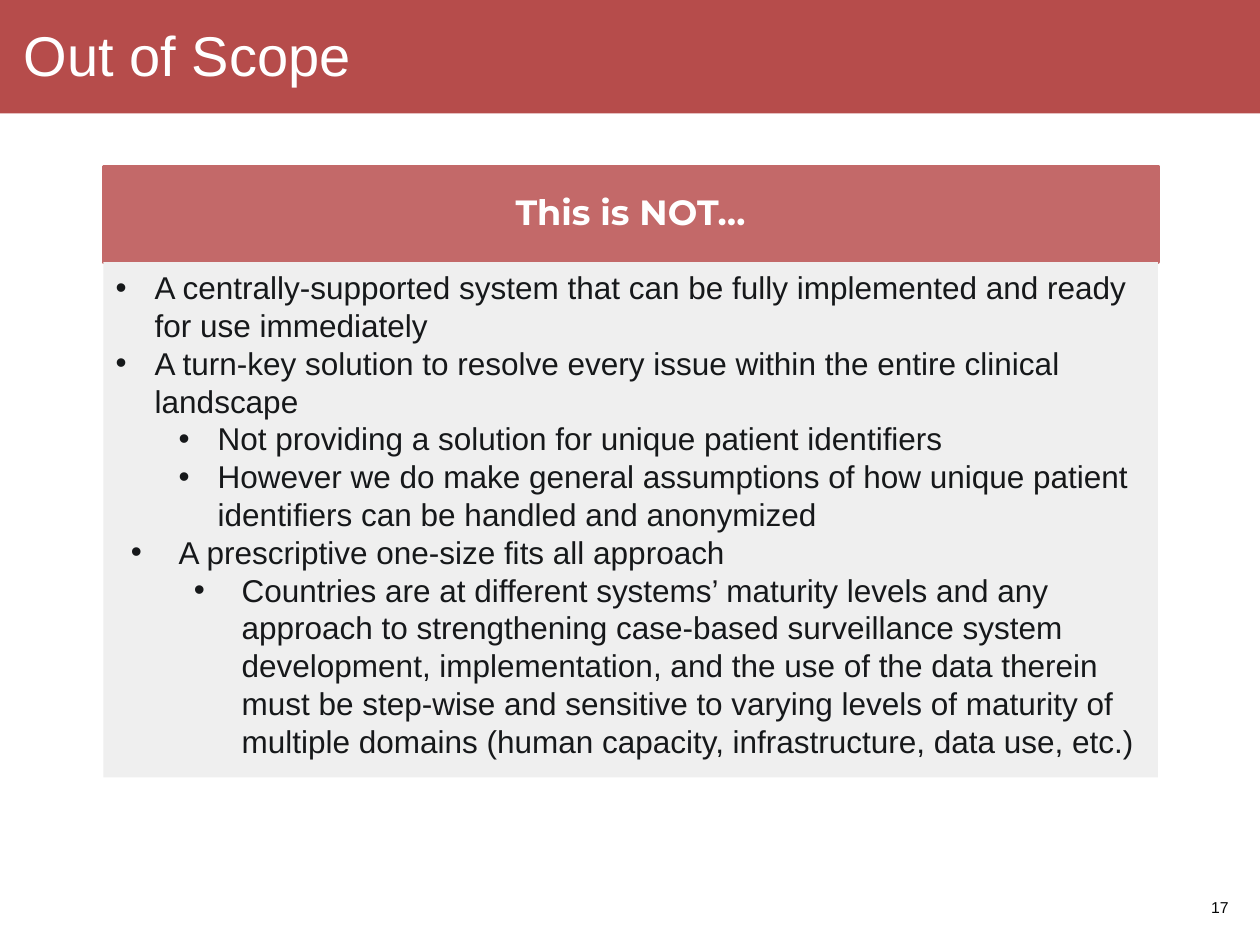
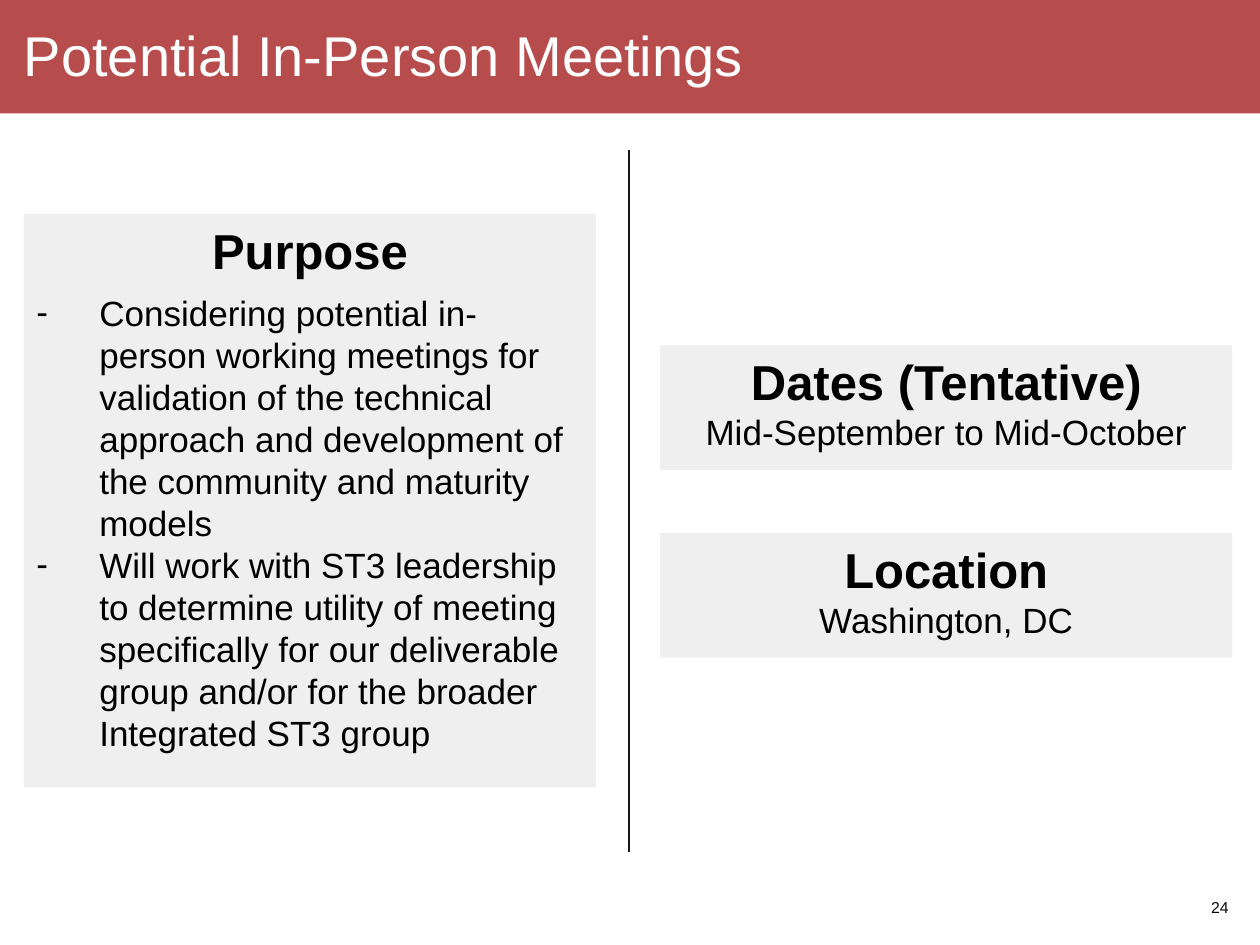
from dataclasses import dataclass, replace
from typing import Optional

from lxml.etree import SubElement
from pptx import Presentation
from pptx.dml.color import RGBColor as Color
from pptx.enum.shapes import MSO_CONNECTOR as Connector, MSO_SHAPE as Preset
from pptx.enum.text import MSO_ANCHOR as Anchor, PP_ALIGN as Align
from pptx.oxml.ns import qn
from pptx.util import Inches, Pt


@dataclass(frozen=True)
class Theme:
    band: str = "B64C4B"
    heading: str = "C36969"
    panel: str = "EFEFEF"
    ink: str = "16181A"
    black: str = "000000"
    white: str = "FFFFFF"
    footer: str = "050606"
    body_font: str = "Arial"
    heading_font: str = "Montserrat"
    title_size: int = 32
    panel_title_size: int = 28
    text_size: int = 20
    list_size: int = 18
    footer_size: int = 9


THEME = Theme()
WIDTH, HEIGHT = Inches(10), Inches(7.5)
COLUMN, ROW = WIDTH / 100, HEIGHT / 75


@dataclass(frozen=True)
class Frame:
    column: float
    row: float
    columns: float
    rows: float

    def box(self) -> tuple[int, int, int, int]:
        return (round(self.column * COLUMN), round(self.row * ROW),
                round(self.columns * COLUMN), round(self.rows * ROW))


@dataclass(frozen=True)
class Line:
    text: str
    size: int
    color: str
    font: str = THEME.body_font
    bold: bool = False
    align: Align = Align.LEFT
    spacing: Optional[float] = None
    before: float = 0
    bullet: str = ""
    indent: float = 0
    hanging: float = 0
    level: int = 0


@dataclass(frozen=True)
class Panel:
    frame: Frame
    lines: tuple[Line, ...]
    fill: Optional[str] = THEME.panel
    outline: Optional[str] = None
    anchor: Anchor = Anchor.TOP
    margins: tuple[float, float] = (1, 0.5)


def add_bullet(paragraph, line: Line) -> None:
    properties = paragraph._p.get_or_add_pPr()
    properties.set("marL", str(round(line.indent * COLUMN)))
    properties.set("indent", str(round(-line.hanging * COLUMN)))
    color = SubElement(properties, qn("a:buClr"))
    SubElement(color, qn("a:srgbClr")).set("val", line.color)
    SubElement(properties, qn("a:buFont")).set("typeface", line.font)
    SubElement(properties, qn("a:buChar")).set("char", line.bullet)


def write_lines(text_frame, lines: tuple[Line, ...]) -> None:
    for index, line in enumerate(lines):
        paragraph = text_frame.add_paragraph() if index else text_frame.paragraphs[0]
        paragraph.text = line.text
        paragraph.level = line.level
        paragraph.alignment = line.align
        if line.bullet:
            add_bullet(paragraph, line)
        if line.spacing:
            paragraph.line_spacing = line.spacing
        if line.before:
            paragraph.space_before = Pt(line.before)
        font = paragraph.font
        font.name, font.size, font.bold = line.font, Pt(line.size), line.bold
        font.color.rgb = Color.from_string(line.color)


def add_panel(slide, panel: Panel) -> None:
    if panel.fill:
        shape = slide.shapes.add_shape(Preset.RECTANGLE, *panel.frame.box())
        shape.shadow.inherit = False
        shape.fill.solid()
        shape.fill.fore_color.rgb = Color.from_string(panel.fill)
        if panel.outline:
            shape.line.color.rgb = Color.from_string(panel.outline)
            shape.line.width = Pt(2)
        else:
            shape.line.fill.background()
    else:
        shape = slide.shapes.add_textbox(*panel.frame.box())
    text_frame = shape.text_frame
    text_frame.word_wrap = True
    text_frame.vertical_anchor = panel.anchor
    horizontal, vertical = panel.margins
    text_frame.margin_left = text_frame.margin_right = round(horizontal * COLUMN)
    text_frame.margin_top = text_frame.margin_bottom = round(vertical * ROW)
    write_lines(text_frame, panel.lines)


def add_divider(slide, column: float, top: float, bottom: float) -> None:
    position = round(column * COLUMN)
    divider = slide.shapes.add_connector(
        Connector.STRAIGHT, position, round(bottom * ROW), position, round(top * ROW))
    divider.line.color.rgb = Color.from_string(THEME.ink)
    divider.line.width = Pt(1)
    SubElement(divider._element.spPr, qn("a:effectLst"))


def add_page(presentation, title: str, number: int, panels: tuple[Panel, ...]):
    slide = presentation.slides.add_slide(presentation.slide_layouts[6])
    title_line = Line(title, THEME.title_size, THEME.white, spacing=0.9)
    number_line = Line(str(number), THEME.footer_size, THEME.footer, align=Align.RIGHT)
    shared = (
        Panel(Frame(0, 0, 100, 9), (), THEME.band),
        Panel(Frame(93.7, 70, 4.8, 4), (number_line,), None, anchor=Anchor.MIDDLE),
        Panel(Frame(1.9, 2.2, 95.9, 5), (title_line,), None, margins=(0, 0)),
    )
    for panel in shared + panels:
        add_panel(slide, panel)
    return slide


def panel_title(text: str) -> Line:
    return Line(text, THEME.panel_title_size, THEME.black, bold=True, align=Align.CENTER)


def fact_panel(row: float, title: str, fact: str) -> Panel:
    fact_line = Line(fact, THEME.text_size, THEME.black, align=Align.CENTER)
    return Panel(Frame(52.4, row, 45.4, 9.9), (panel_title(title), fact_line))


def build_scope(presentation) -> None:
    heading = Line("This is NOT…", THEME.list_size + 2, THEME.white, THEME.heading_font,
                   bold=True, align=Align.CENTER, spacing=0.9)
    point = Line("", THEME.list_size, THEME.ink, bullet="•", indent=3.1, hanging=3.1)
    subpoint = replace(point, indent=8.1, level=1)
    wide_point = replace(point, indent=5, hanging=3.8)
    wide_subpoint = replace(wide_point, indent=10, level=1)
    items = (
        (point, "A centrally-supported system that can be fully implemented and ready "
                "for use immediately"),
        (point, "A turn-key solution to resolve every issue within the entire clinical "
                "landscape"),
        (subpoint, "Not providing a solution for unique patient identifiers"),
        (subpoint, "However we do make general assumptions of how unique patient "
                   "identifiers can be handled and anonymized"),
        (wide_point, "A prescriptive one-size fits all approach"),
        (wide_subpoint, "Countries are at different systems’ maturity levels and any "
                        "approach to strengthening case-based surveillance system "
                        "development, implementation, and the use of the data therein "
                        "must be step-wise and sensitive to varying levels of maturity of "
                        "multiple domains (human capacity, infrastructure, data use, etc.)"),
    )
    add_page(presentation, "Out of Scope", 17, (
        Panel(Frame(8.2, 13.2, 83.7, 7.6), (heading,), THEME.heading, THEME.heading,
              Anchor.MIDDLE, (1.2, 0.7)),
        Panel(Frame(8.2, 20.8, 83.7, 40.9),
              tuple(replace(style, text=text) for style, text in items)),
    ))


def build_meetings(presentation) -> None:
    dash = Line("Will work with ST3 leadership to determine utility of meeting specifically "
                "for our deliverable group and/or for the broader Integrated ST3 group",
                THEME.text_size, THEME.black, bullet="-", indent=5, hanging=5)
    first_dash = replace(
        dash, before=7,
        text="Considering potential in-person working meetings for validation of the "
             "technical approach and development of the community and maturity models")
    slide = add_page(presentation, "Potential In-Person Meetings", 24, (
        Panel(Frame(1.9, 17, 45.4, 45.5), (panel_title("Purpose"), first_dash, dash)),
        fact_panel(27.4, "Dates (Tentative)", "Mid-September to Mid-October"),
        fact_panel(42.3, "Location", "Washington, DC"),
    ))
    add_divider(slide, 49.9, 11.9, 67.6)


def main() -> None:
    presentation = Presentation()
    presentation.slide_width, presentation.slide_height = WIDTH, HEIGHT
    build_scope(presentation)
    build_meetings(presentation)
    presentation.save("out.pptx")


if __name__ == "__main__":
    main()
